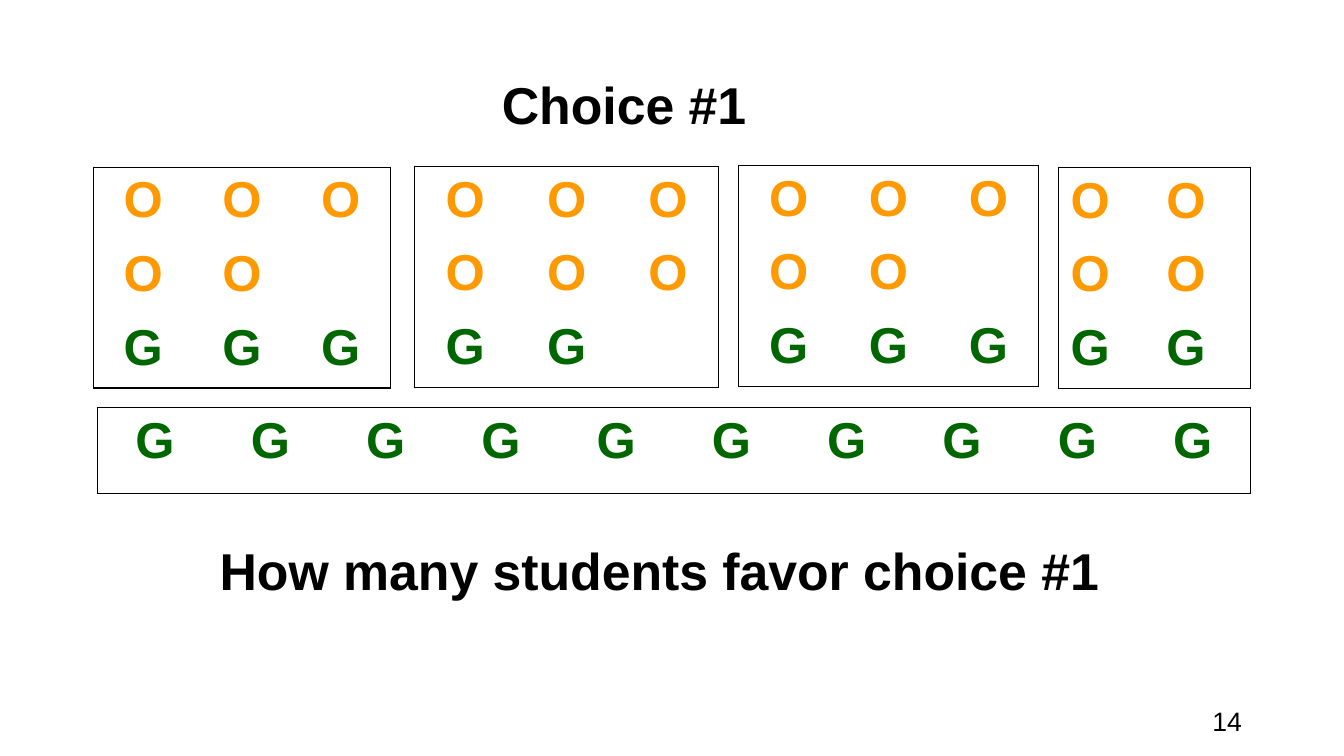
from dataclasses import dataclass

from lxml import etree
from pptx import Presentation
from pptx.dml.color import RGBColor
from pptx.enum.text import MSO_ANCHOR, PP_ALIGN
from pptx.oxml.ns import qn
from pptx.slide import Slide
from pptx.table import _Cell
from pptx.text.text import _Paragraph
from pptx.util import Pt

LEFT, CENTER, RIGHT = PP_ALIGN.LEFT, PP_ALIGN.CENTER, PP_ALIGN.RIGHT
TOP, MIDDLE = MSO_ANCHOR.TOP, MSO_ANCHOR.MIDDLE


@dataclass(frozen=True)
class Theme:
    font: str = "Arial"
    ink: str = "000000"
    orange: str = "FF9900"
    green: str = "006600"
    letter_size: float = 36
    heading_size: float = 37
    number_size: float = 19
    border: float = 1


@dataclass(frozen=True)
class VoteGrid:
    """A bordered group of votes: one string per row, one letter per vote."""
    left: float
    top: float
    columns: list[float]
    row_height: float
    rows: list[str]


@dataclass(frozen=True)
class Label:
    text: str
    left: float
    top: float
    width: float
    height: float
    size: float
    bold: bool = True
    align: PP_ALIGN = LEFT
    anchor: MSO_ANCHOR = TOP
    line_spacing: float = 0.9


THEME = Theme()
VOTE_COLORS = {"O": THEME.orange, "G": THEME.green}
ROW = 52.6

GRIDS = [
    VoteGrid(67, 119.4, [70.56] * 3, ROW, ["OOO", "OO", "GGG"]),
    VoteGrid(296, 118.9, [72.5] * 3, ROW, ["OOO", "OOO", "GG"]),
    VoteGrid(527.6, 118.2, [71.4] * 3, ROW, ["OOO", "OO", "GGG"]),
    VoteGrid(756, 119.6, [45.4, 91.6], ROW, ["OO", "OO", "GG"]),
    VoteGrid(69.6, 291.3, [82.36] * 10, 61.2, ["G" * 10]),
]

LABELS = [
    Label("Choice #1", 351.4, 53.3, 190, 51, THEME.heading_size),
    Label("How many students favor choice #1", 149.8, 386, 685.4, 51,
          THEME.heading_size),
    Label("14", 678.2, 500.4, 216, 28.8, THEME.number_size, bold=False,
          align=RIGHT, anchor=MIDDLE, line_spacing=1),
]


def style_text(p: _Paragraph, size: float, color: str, bold: bool) -> None:
    for r in p.runs:
        r.font.name = THEME.font
        r.font.size = Pt(size)
        r.font.bold = bold
        r.font.color.rgb = RGBColor.from_string(color)


def set_borders(cell: _Cell, sides: dict[str, bool]) -> None:
    """Draw the marked sides of a cell and clear the others."""
    tc_pr = cell._tc.get_or_add_tcPr()
    for side, drawn in sides.items():
        line = etree.SubElement(tc_pr, qn(f"a:ln{side}"))
        if drawn:
            line.set("w", str(Pt(THEME.border)))
            fill = etree.SubElement(line, qn("a:solidFill"))
            etree.SubElement(fill, qn("a:srgbClr")).set("val", THEME.ink)
        else:
            etree.SubElement(line, qn("a:noFill"))


def add_vote_grid(s: Slide, grid: VoteGrid) -> None:
    n_rows, n_cols = len(grid.rows), len(grid.columns)
    table = s.shapes.add_table(
        n_rows, n_cols, Pt(grid.left), Pt(grid.top),
        Pt(sum(grid.columns)), Pt(grid.row_height * n_rows)).table
    table.first_row = table.horz_banding = False
    for column, width in zip(table.columns, grid.columns):
        column.width = Pt(width)

    for i, votes in enumerate(grid.rows):
        table.rows[i].height = Pt(grid.row_height)
        for j, vote in enumerate(votes.ljust(n_cols)):
            cell = table.cell(i, j)
            # Only the outer edge of the grid is ruled
            set_borders(cell, {"L": j == 0, "R": j == n_cols - 1,
                               "T": i == 0, "B": i == n_rows - 1})
            cell.fill.background()
            if vote in VOTE_COLORS:
                cell.text_frame.text = vote
                p = cell.text_frame.paragraphs[0]
                p.alignment = CENTER
                style_text(p, THEME.letter_size, VOTE_COLORS[vote], True)


def add_label(s: Slide, label: Label) -> None:
    box = s.shapes.add_textbox(Pt(label.left), Pt(label.top),
                               Pt(label.width), Pt(label.height))
    tf = box.text_frame
    tf.word_wrap = True
    tf.vertical_anchor = label.anchor
    tf.text = label.text
    p = tf.paragraphs[0]
    p.alignment = label.align
    p.line_spacing = label.line_spacing
    style_text(p, label.size, THEME.ink, label.bold)


def main() -> None:
    prs = Presentation()
    prs.slide_width, prs.slide_height = Pt(960), Pt(540)
    s = prs.slides.add_slide(prs.slide_layouts[6])

    # Groups of votes
    for grid in GRIDS:
        add_vote_grid(s, grid)

    # Heading, question and slide number
    for label in LABELS:
        add_label(s, label)

    prs.save("out.pptx")


if __name__ == "__main__":
    main()
